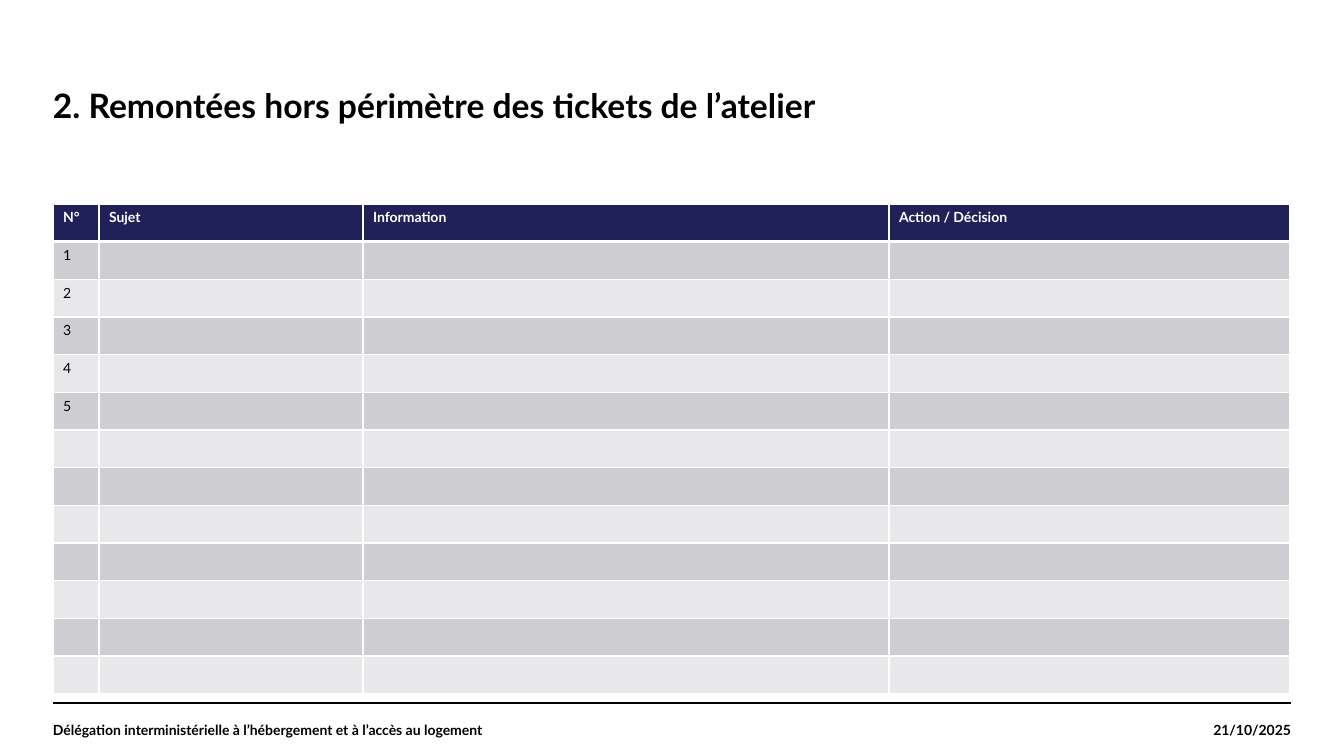
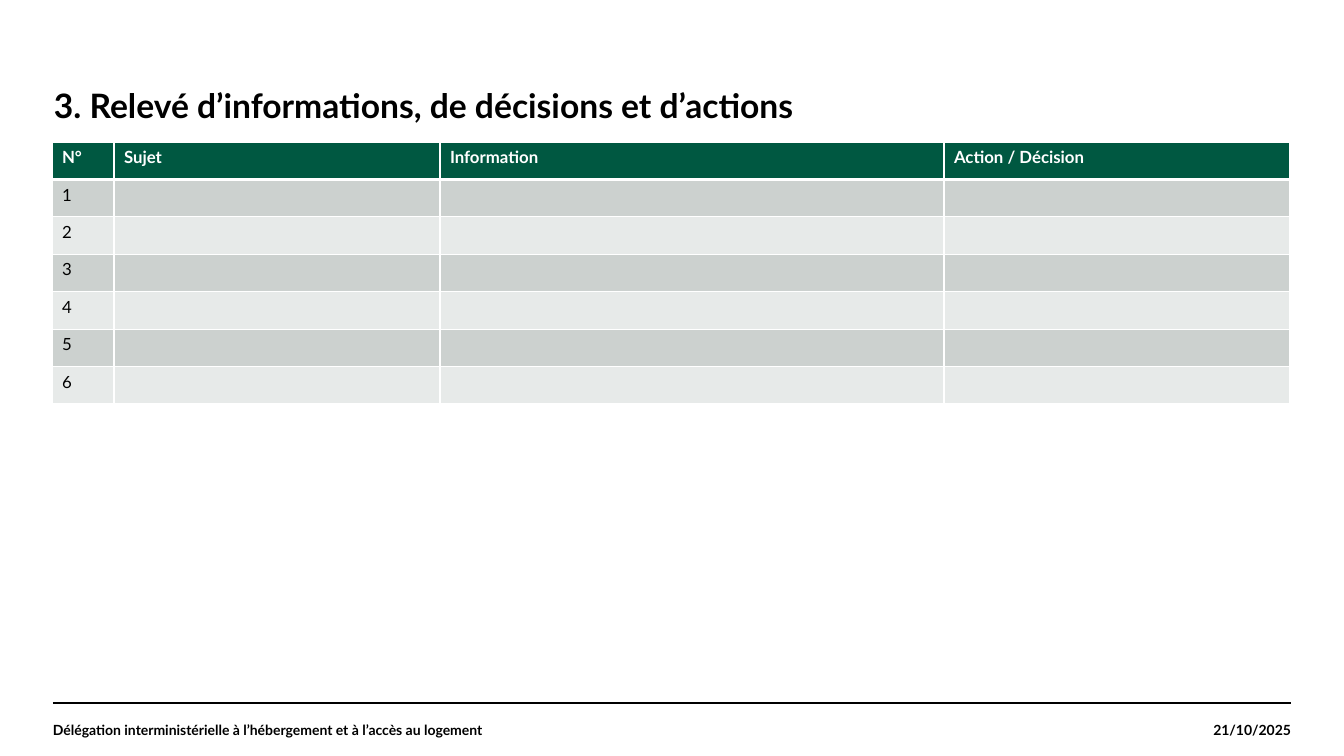
from lxml.etree import SubElement
from pptx import Presentation
from pptx.dml.color import RGBColor
from pptx.enum.shapes import MSO_CONNECTOR
from pptx.enum.text import MSO_ANCHOR as Anchor, PP_ALIGN as Align
from pptx.oxml.ns import qn
from pptx.util import Emu, Pt

COLORS = {
    "ink": "000000", "paper": "FFFFFF",
    "navy": "21215A", "navy_dark": "CDCDD2", "navy_light": "E8E8EA",
    "green": "005841", "green_dark": "CCD1CF", "green_light": "E7EAE9",
}
FONT = "Lato"
HEADINGS = ["N°", "Sujet", "Information", "Action / Décision"]
ORGANISATION = "Délégation interministérielle à l’hébergement et à l’accès au logement"
MEETING_DATE = "21/10/2025"


def px(length):
    return Emu(round(length * 914400 / 100.8))


def rgb(name):
    return RGBColor.from_string(COLORS[name])


class Deck:
    """Holds the shared style and the slide being filled."""

    def __init__(self):
        self.prs = Presentation()
        self.prs.slide_width, self.prs.slide_height = px(1344), px(756)
        self.slide = None

    def new_slide(self, title, left, top):
        self.slide = self.prs.slides.add_slide(self.prs.slide_layouts[6])
        self.line(53, 703, 1291, 703)
        self.text(title, left, top, 1238, 106, 24, spacing=0.9)
        self.text(MEETING_DATE, 1119, 703, 172, 53, 10, Align.RIGHT, Anchor.MIDDLE)
        self.text(ORGANISATION, 53, 703, 868, 53, 10, anchor=Anchor.MIDDLE)

    def style(self, paragraph, size, color="ink", bold=True):
        for run in paragraph.runs:
            run.font.name, run.font.size, run.font.bold = FONT, Pt(size), bold
            run.font.color.rgb = rgb(color)

    def line(self, x1, y1, x2, y2):
        rule = self.slide.shapes.add_connector(
            MSO_CONNECTOR.STRAIGHT, px(x1), px(y1), px(x2), px(y2))
        rule.line.color.rgb = rgb("ink")
        rule.line.width = Pt(0.8)
        SubElement(rule._element.spPr, qn("a:effectLst"))

    def text(self, words, left, top, width, height, size,
             align=Align.LEFT, anchor=Anchor.TOP, spacing=1.0):
        box = self.slide.shapes.add_textbox(px(left), px(top), px(width), px(height))
        frame = box.text_frame
        frame.word_wrap = True
        frame.vertical_anchor = anchor
        frame.margin_left = frame.margin_top = frame.margin_right = frame.margin_bottom = 0
        frame.text = words
        paragraph = frame.paragraphs[0]
        paragraph.alignment, paragraph.line_spacing = align, spacing
        self.style(paragraph, size)

    def borders(self, cell, row):
        properties = cell._tc.get_or_add_tcPr()
        top, bottom = (3 if row == 1 else 1), (3 if row == 0 else 1)
        for side, width in (("L", 1), ("R", 1), ("T", top), ("B", bottom)):
            edge = SubElement(properties, qn(f"a:ln{side}"), w=str(Pt(width)))
            fill = SubElement(edge, qn("a:solidFill"))
            SubElement(fill, qn("a:srgbClr"), val=COLORS["paper"])

    def table(self, left, top, height, widths, row_count, numbered, size, theme):
        table = self.slide.shapes.add_table(
            row_count + 1, len(widths), px(left), px(top), px(sum(widths)), px(height)).table
        for column, width in zip(table.columns, widths):
            column.width = px(width)
        for row, table_row in enumerate(table.rows):
            header = row == 0
            shade = theme if header else f"{theme}_{'dark' if row % 2 else 'light'}"
            number = str(row) if row <= numbered else ""
            labels = HEADINGS if header else [number, "", "", ""]
            for cell, label in zip(table_row.cells, labels):
                self.borders(cell, row)
                cell.fill.solid()
                cell.fill.fore_color.rgb = rgb(shade)
                paragraph = cell.text_frame.paragraphs[0]
                if label:
                    paragraph.text = label
                    self.style(paragraph, size, "paper" if header else "ink", header)
                else:
                    SubElement(paragraph._p, qn("a:endParaRPr"), sz=str(size * 100))


def main():
    deck = Deck()
    deck.new_slide("2. Remontées hors périmètre des tickets de l’atelier", 53, 89)
    deck.table(53, 204, 490, [46, 264, 526, 401], 12, 5, 10, "navy")
    deck.new_slide("3. Relevé d’informations, de décisions et d’actions", 54, 89)
    deck.table(52, 142, 262, [62, 326, 504, 346], 6, 6, 12, "green")
    deck.prs.save("out.pptx")


if __name__ == "__main__":
    main()
